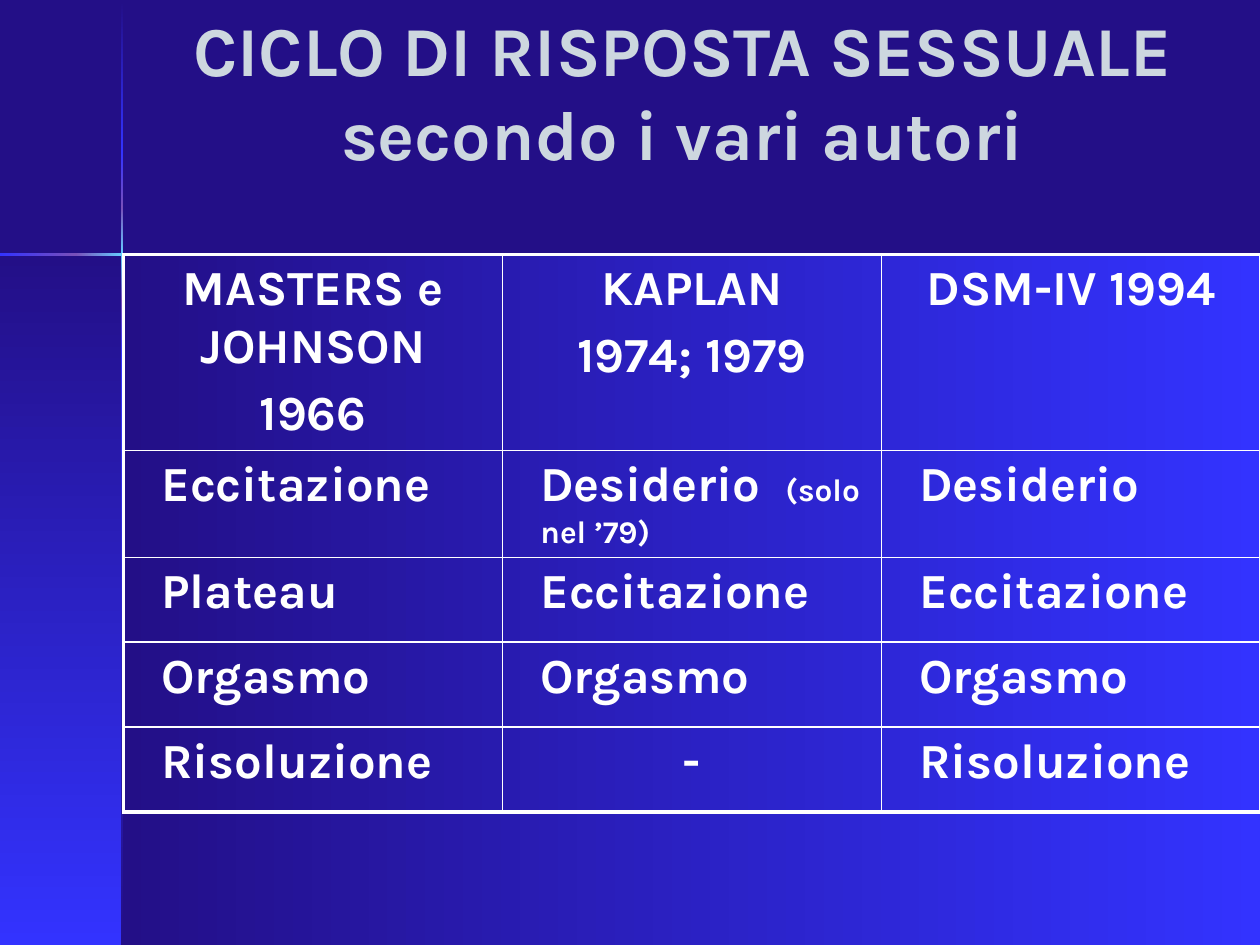
from dataclasses import dataclass

from lxml import etree
from pptx import Presentation
from pptx import util as u
from pptx.dml.color import RGBColor
from pptx.enum import shapes, text
from pptx.oxml import ns


@dataclass(frozen=True)
class Theme:
    font: str = "Karla"
    navy: str = "230F87"
    blue: str = "3333FF"
    violet: str = "7850BA"
    cyan: str = "66CCFF"
    white: str = "FFFFFF"
    title_color: str = "CDD7DF"
    title_size: int = 40
    cell_size: int = 28
    note_size: int = 18
    outer_line: float = 2.25
    inner_line: float = 1


THEME = Theme()
SLIDE_WIDTH, SLIDE_HEIGHT = 25.4, 19.05
CROSS_X, CROSS_Y = 2.46, 5.13
LINE_WIDTH = 0.05
COLUMN_WIDTH = 7.64
ROW_HEIGHTS = [3.95, 2.14, 1.71, 1.71, 1.71]
HEADERS = ["MASTERS e JOHNSON\n1966", "KAPLAN\n1974; 1979", "DSM-IV 1994"]
PHASES = [
    ["Eccitazione", "Desiderio  ", "Desiderio"],
    ["Plateau", "Eccitazione", "Eccitazione"],
    ["Orgasmo", "Orgasmo", "Orgasmo"],
    ["Risoluzione", "-", "Risoluzione"],
]


def add_xml(parent, tag, **attributes):
    return etree.SubElement(parent, ns.qn(tag), attributes)


def add_gradient_box(page, left, top, width, height, colors, angle):
    """Add a borderless rectangle with evenly spaced gradient colours."""
    box = page.shapes.add_shape(
        shapes.MSO_SHAPE.RECTANGLE, u.Cm(left), u.Cm(top), u.Cm(width), u.Cm(height)
    )
    box.shadow.inherit = False
    box.line.fill.background()
    box.fill.gradient()
    gradient = box.fill._xPr.find(ns.qn("a:gradFill"))
    for child in list(gradient):
        gradient.remove(child)
    stops = add_xml(gradient, "a:gsLst")
    for index, color in enumerate(colors):
        position = 100000 * index // (len(colors) - 1)
        stop = add_xml(stops, "a:gs", pos=str(position))
        add_xml(stop, "a:srgbClr", val=color)
    add_xml(gradient, "a:lin", ang=str(angle * 60000), scaled="0")


def add_background(page):
    fill = page.background.fill
    fill.solid()
    fill.fore_color.rgb = RGBColor.from_string(THEME.navy)
    right, below = SLIDE_WIDTH - CROSS_X, SLIDE_HEIGHT - CROSS_Y
    fade = [THEME.navy, THEME.blue]
    add_gradient_box(page, CROSS_X, CROSS_Y, right, below, fade, 0)
    add_gradient_box(page, 0, CROSS_Y, CROSS_X, below, fade, 90)


def add_glowing_lines(page):
    """Draw the two crossing lines, brightest where they meet."""
    rise = [THEME.blue, THEME.violet]
    glow = [THEME.violet, THEME.cyan, THEME.violet]
    fall = [THEME.violet, THEME.blue]
    fade_out = [THEME.blue, THEME.navy]
    vertical = [
        (0.03, 3.07, [THEME.navy, THEME.blue]),
        (3.07, 4.19, rise),
        (4.19, 6.05, glow),
        (6.05, 7.16, fall),
        (7.16, SLIDE_HEIGHT, fade_out),
    ]
    horizontal = [
        (0, 1.53, rise),
        (1.53, 3.38, glow),
        (3.38, 4.5, fall),
        (4.5, SLIDE_WIDTH, fade_out),
    ]
    half = LINE_WIDTH / 2
    for start, end, colors in vertical:
        add_gradient_box(page, CROSS_X - half, start, LINE_WIDTH, end - start, colors, 90)
    for start, end, colors in horizontal:
        add_gradient_box(page, start, CROSS_Y - half, end - start, LINE_WIDTH, colors, 0)


def format_span(span, size, color):
    span.font.name = THEME.font
    span.font.size = u.Pt(size)
    span.font.bold = True
    span.font.color.rgb = RGBColor.from_string(color)


def add_title(page, title):
    box = page.shapes.add_textbox(u.Cm(2.11), 0, u.Cm(23.29), u.Cm(3.68))
    frame = box.text_frame
    frame.word_wrap = True
    frame.text = title
    for para in frame.paragraphs:
        para.alignment = text.PP_ALIGN.CENTER
        for span in para.runs:
            format_span(span, THEME.title_size, THEME.title_color)


def set_borders(cell, outer_sides):
    properties = cell._tc.get_or_add_tcPr()
    for side in "LRTB":
        width = THEME.outer_line if side in outer_sides else THEME.inner_line
        line = add_xml(properties, f"a:ln{side}", w=str(u.Pt(width)))
        fill = add_xml(line, "a:solidFill")
        add_xml(fill, "a:srgbClr", val=THEME.white)


def fill_cell(cell, words, centered):
    cell.text_frame.text = words
    for para in cell.text_frame.paragraphs:
        para.space_before = u.Pt(THEME.cell_size * 0.2)
        if centered:
            para.alignment = text.PP_ALIGN.CENTER
        else:
            para._p.get_or_add_pPr().set("marL", str(u.Cm(0.51)))
        for span in para.runs:
            format_span(span, THEME.cell_size, THEME.white)


def add_phase_table(page):
    rows = [HEADERS] + PHASES
    last_row, last_column = len(rows) - 1, len(HEADERS) - 1
    table = page.shapes.add_table(
        len(rows), len(HEADERS), u.Cm(2.49), u.Cm(CROSS_Y),
        u.Cm(COLUMN_WIDTH * len(HEADERS)), u.Cm(sum(ROW_HEIGHTS)),
    ).table
    table.first_row = table.horz_banding = False
    for column in table.columns:
        column.width = u.Cm(COLUMN_WIDTH)
    for row_index, (height, row) in enumerate(zip(ROW_HEIGHTS, rows)):
        table.rows[row_index].height = u.Cm(height)
        for column_index, words in enumerate(row):
            cell = table.cell(row_index, column_index)
            fill_cell(cell, words, row_index == 0 or words == "-")
            edges = {
                "L": column_index == 0, "R": column_index == last_column,
                "T": row_index == 0, "B": row_index == last_row,
            }
            set_borders(cell, [side for side, is_outer in edges.items() if is_outer])
            cell.fill.background()
    note = table.cell(1, 1).text_frame.paragraphs[0].add_run()
    note.text = "(solo nel ’79)"
    format_span(note, THEME.note_size, THEME.white)


def main():
    deck = Presentation()
    deck.slide_width, deck.slide_height = u.Cm(SLIDE_WIDTH), u.Cm(SLIDE_HEIGHT)
    page = deck.slides.add_slide(deck.slide_layouts[6])
    add_background(page)
    add_glowing_lines(page)
    add_phase_table(page)
    add_title(page, "CICLO DI RISPOSTA SESSUALE\nsecondo i vari autori")
    deck.save("out.pptx")


if __name__ == "__main__":
    main()
